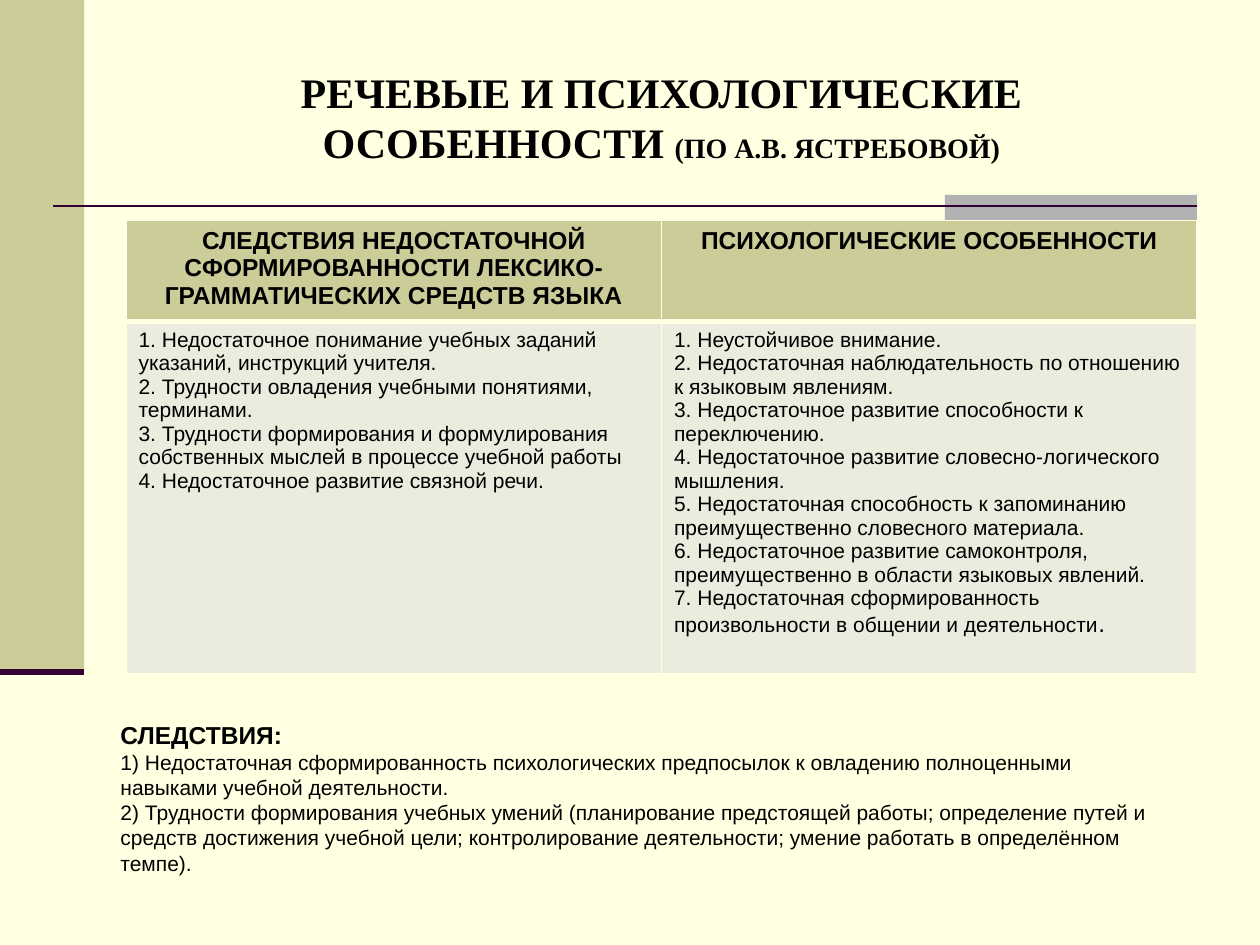
from typing import NamedTuple

from lxml.etree import SubElement
from pptx import Presentation
from pptx.dml.color import RGBColor
from pptx.enum.shapes import MSO_CONNECTOR, MSO_SHAPE
from pptx.enum.text import MSO_ANCHOR, PP_ALIGN
from pptx.oxml.ns import qn
from pptx.util import Cm, Pt

COLORS = {
    "background": "FFFFE1",
    "olive": "CCCC99",
    "gray": "B2B2B2",
    "plum": "330033",
    "body": "ECECDE",
    "text": "000000",
}

TITLE = {"name": "Times New Roman", "size": Pt(24), "bold": True}
SUBTITLE = {**TITLE, "size": Pt(16)}
HEADING = {"name": "Arial", "size": Pt(14), "bold": True}
BODY = {"name": "Arial", "size": Pt(12), "bold": False}
LARGE_BODY = {**BODY, "size": Pt(14)}


class Bar(NamedTuple):
    left: float
    top: float
    width: float
    height: float
    color: str


class Rule(NamedTuple):
    left: float
    right: float
    y: float
    weight: float


class Run(NamedTuple):
    text: str
    fmt: dict


BARS = [Bar(0, 0, 1.7, 13.55, "olive"), Bar(19.05, 3.93, 5.08, 0.51, "gray")]
RULES = [Rule(1.06, 24.13, 4.15, 1.5), Rule(0, 1.7, 13.55, 3.5)]

HEADERS = [
    "СЛЕДСТВИЯ НЕДОСТАТОЧНОЙ СФОРМИРОВАННОСТИ ЛЕКСИКО-ГРАММАТИЧЕСКИХ СРЕДСТВ ЯЗЫКА",
    "ПСИХОЛОГИЧЕСКИЕ ОСОБЕННОСТИ",
]
SPEECH = [
    "1. Недостаточное понимание учебных заданий указаний, инструкций учителя.",
    "2. Трудности овладения учебными понятиями, терминами.",
    "3. Трудности формирования и формулирования собственных мыслей в пpoцессе учебной работы",
    "4. Недостаточное развитие связной речи.",
]
PSYCHOLOGY = [
    "1. Неустойчивое внимание.",
    "2. Недостаточная наблюдательность по отношению к языковым явлениям.",
    "3. Недостаточное развитие способности к переключению.",
    "4. Недостаточное развитие словесно-логического мышления.",
    "5. Недостаточная способность к запоминанию преимущественно словесного материала.",
    "6. Недостаточное развитие самоконтроля, преимущественно в области языковых явлений.",
]
LAST_FEATURE = "7. Недостаточная сформированность произвольности в общении и деятельности"
CONSEQUENCES = [
    "1) Недостаточная сформированность психологических предпосылок к овладению полноценными навыками учебной деятельности.",
    "2) Трудности формирования учебных умений (планирование предстоящей работы; определение путей и средств достижения учебной цели; контролирование деятельности; умение работать в определённом темпе).",
]


def rgb(name: str) -> RGBColor:
    return RGBColor.from_string(COLORS[name])


def lines(texts: list[str]) -> list[list[Run]]:
    return [[Run(text, BODY)] for text in texts]


def write(tf, paragraphs: list[list[Run]], align=PP_ALIGN.LEFT) -> None:
    tf.word_wrap = True
    for i, runs in enumerate(paragraphs):
        p = tf.add_paragraph() if i else tf.paragraphs[0]
        p.alignment = align
        for run in runs:
            r = p.add_run()
            r.text = run.text
            r.font.color.rgb = rgb("text")
            for key, value in run.fmt.items():
                setattr(r.font, key, value)


def add_bar(s, bar: Bar) -> None:
    sp = s.shapes.add_shape(MSO_SHAPE.RECTANGLE, *map(Cm, bar[:4]))
    sp.shadow.inherit = False
    sp.fill.solid()
    sp.fill.fore_color.rgb = rgb(bar.color)
    sp.line.fill.background()


def add_rule(s, rule: Rule) -> None:
    ends = map(Cm, (rule.left, rule.y, rule.right, rule.y))
    cxn = s.shapes.add_connector(MSO_CONNECTOR.STRAIGHT, *ends)
    cxn.line.color.rgb = rgb("plum")
    cxn.line.width = Pt(rule.weight)
    SubElement(cxn._element.spPr, qn("a:effectLst"))


def add_text(s, box: tuple, paragraphs: list[list[Run]], align=PP_ALIGN.LEFT) -> None:
    tf = s.shapes.add_textbox(*map(Cm, box)).text_frame
    tf.vertical_anchor = MSO_ANCHOR.MIDDLE
    write(tf, paragraphs, align)


def set_borders(cell, weights: dict[str, float]) -> None:
    tcPr = cell._tc.get_or_add_tcPr()
    for side, weight in weights.items():
        ln = SubElement(tcPr, qn(f"a:ln{side}"), w=str(Pt(weight)))
        fill = SubElement(ln, qn("a:solidFill"))
        SubElement(fill, qn("a:srgbClr"), val=COLORS["background"])


def add_features_table(s) -> None:
    headers = [[[Run(text, HEADING)]] for text in HEADERS]
    last = [Run(LAST_FEATURE, BODY), Run(".", LARGE_BODY)]
    bodies = [lines(SPEECH), lines(PSYCHOLOGY) + [last]]
    rows = [
        (2.03, "olive", PP_ALIGN.CENTER, {"T": 1, "B": 3}, headers),
        (7.09, "body", PP_ALIGN.LEFT, {"T": 3, "B": 1}, bodies),
    ]
    frame = s.shapes.add_table(2, 2, *map(Cm, (2.54, 4.45, 21.59, 9.12)))
    table = frame.table
    for i, (height, color, align, edges, contents) in enumerate(rows):
        table.rows[i].height = Cm(height)
        for j, paragraphs in enumerate(contents):
            cell = table.cell(i, j)
            set_borders(cell, {"L": 1, "R": 1, **edges})
            cell.fill.solid()
            cell.fill.fore_color.rgb = rgb(color)
            write(cell.text_frame, paragraphs, align)


def main() -> None:
    prs = Presentation()
    prs.slide_width, prs.slide_height = Cm(25.4), Cm(19.05)
    s = prs.slides.add_slide(prs.slide_layouts[6])
    s.background.fill.solid()
    s.background.fill.fore_color.rgb = rgb("background")
    for bar in BARS:
        add_bar(s, bar)
    for rule in RULES:
        add_rule(s, rule)
    title = [
        Run("РЕЧЕВЫЕ И ПСИХОЛОГИЧЕСКИЕ ОСОБЕННОСТИ ", TITLE),
        Run("(ПО А.В. ЯСТРЕБОВОЙ)", SUBTITLE),
    ]
    add_text(s, (2.54, 0.76, 21.59, 3.18), [title], PP_ALIGN.CENTER)
    add_features_table(s)
    summary = [[Run("СЛЕДСТВИЯ:", HEADING)]] + lines(CONSEQUENCES)
    add_text(s, (2.18, 14.1, 21.59, 3.96), summary)
    prs.save("out.pptx")


if __name__ == "__main__":
    main()
